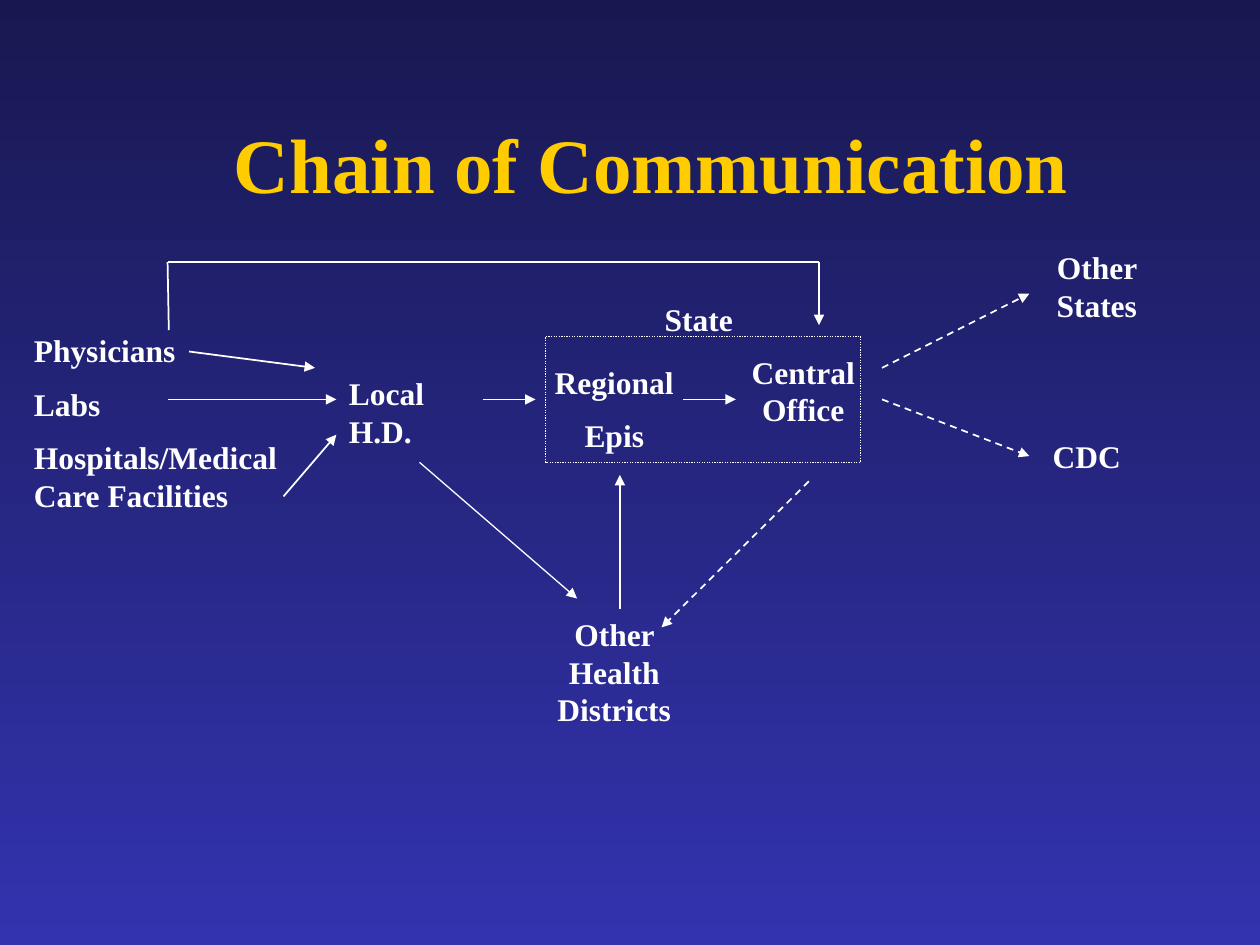
from dataclasses import dataclass

from pptx import Presentation
from pptx.dml.color import RGBColor
from pptx.enum.dml import MSO_LINE
from pptx.enum.shapes import MSO_CONNECTOR, MSO_SHAPE
from pptx.enum.text import MSO_ANCHOR, MSO_AUTO_SIZE, PP_ALIGN
from pptx.oxml.ns import qn
from pptx.util import Inches, Pt
from lxml.etree import SubElement


@dataclass(frozen=True)
class Theme:
    font: str = "Times New Roman"
    title_color: RGBColor = RGBColor(0xFF, 0xCC, 0x00)
    ink: RGBColor = RGBColor(0xFF, 0xFF, 0xFF)
    background_top: RGBColor = RGBColor(0x18, 0x18, 0x51)
    background_bottom: RGBColor = RGBColor(0x33, 0x33, 0xAF)
    title_size: Pt = Pt(44)
    label_size: Pt = Pt(18)
    label_gap: Pt = Pt(9)
    thin: Pt = Pt(0.75)
    medium: Pt = Pt(1)


THEME = Theme()


def apply_format(target, values):
    for name, value in values.items():
        setattr(target, name, value)


def format_font(font, size, color):
    apply_format(font, {"name": THEME.font, "size": size, "bold": True})
    font.color.rgb = color


def place(shape, box):
    names = ("left", "top", "width", "height")
    apply_format(shape, {name: Inches(value) for name, value in zip(names, box)})


def shift(box, offset):
    return box[0] + offset[0], box[1] + offset[1]


def add_label(slide, box, offset, size, lines, alignment=PP_ALIGN.CENTER):
    lengths = [Inches(value) for value in (*shift(box, offset), *size)]
    frame = slide.shapes.add_textbox(*lengths).text_frame
    apply_format(frame, {"word_wrap": True, "auto_size": MSO_AUTO_SIZE.SHAPE_TO_FIT_TEXT})
    frame.text = "\n".join(lines)
    for index, paragraph in enumerate(frame.paragraphs):
        gap = THEME.label_gap if index else Pt(0)
        apply_format(paragraph, {"alignment": alignment, "space_before": gap})
        format_font(paragraph.font, THEME.label_size, THEME.ink)


def add_line(slide, box, start, end, width=THEME.thin, dash=None, arrow=True):
    points = [Inches(value) for value in (*shift(box, start), *shift(box, end))]
    connector = slide.shapes.add_connector(MSO_CONNECTOR.STRAIGHT, *points)
    connector.line.color.rgb = THEME.ink
    apply_format(connector.line, {"width": width, "dash_style": dash})
    if arrow:
        SubElement(connector.line._get_or_add_ln(), qn("a:tailEnd"), type="triangle")
    SubElement(connector._element.spPr, qn("a:effectLst"))


def add_dashed_arrow(slide, box, start, end):
    add_line(slide, box, start, end, THEME.medium, MSO_LINE.DASH)


def paint_background(slide):
    fill = slide.background.fill
    fill.gradient()
    fill.gradient_angle = 270
    colors = (THEME.background_top, THEME.background_bottom)
    for stop, color, position in zip(fill.gradient_stops, colors, (0, 1)):
        stop.color.rgb = color
        stop.position = position


def add_title(slide, box):
    title = slide.shapes.title
    place(title, box)
    frame = title.text_frame
    frame.text = "Chain of Communication"
    apply_format(frame, {
        "vertical_anchor": MSO_ANCHOR.MIDDLE,
        "word_wrap": True,
        "auto_size": MSO_AUTO_SIZE.NONE,
    })
    paragraph = frame.paragraphs[0]
    paragraph.alignment = PP_ALIGN.CENTER
    format_font(paragraph.font, THEME.title_size, THEME.title_color)


def add_reporters(slide, box):
    reporters = ("Physicians", "Labs", "Hospitals/Medical Care Facilities")
    add_label(slide, box, (0, 0.5), (2.25, 1.62), reporters, PP_ALIGN.LEFT)
    add_label(slide, box, (2.5, 0.84), (1.25, 0.7), ["Local H.D."], PP_ALIGN.LEFT)
    add_line(slide, box, (1.33, 0.71), (2.33, 0.84), THEME.medium)
    add_line(slide, box, (1.16, 1.09), (2.5, 1.09))
    add_line(slide, box, (2.08, 1.86), (2.5, 1.37), THEME.medium)


def add_bypass(slide, box):
    width, height = box[2:]
    add_line(slide, box, (0.01, height), (0, 0), THEME.medium, arrow=False)
    add_line(slide, box, (0, 0), (width, 0), THEME.medium, arrow=False)
    add_line(slide, box, (width, 0), (width, 0.5))


def add_state(slide, box):
    frame = slide.shapes.add_shape(MSO_SHAPE.RECTANGLE, 0, 0, 0, 0)
    place(frame, (*shift(box, (0.5, 0.34)), 2.5, 1))
    frame.shadow.inherit = False
    frame.fill.background()
    frame.line.color.rgb = THEME.ink
    apply_format(frame.line, {"width": THEME.thin, "dash_style": MSO_LINE.ROUND_DOT})
    add_label(slide, box, (1.09, 0), (1.25, 0.4), ["State"])
    add_label(slide, box, (0.42, 0.5), (1.25, 0.85), ["Regional", "Epis"])
    add_label(slide, box, (1.92, 0.42), (1.25, 0.7), ["Central Office"])
    for left in (0, 1.59):
        add_line(slide, box, (left, 0.84), (left + 0.42, 0.84))


def add_districts(slide, box):
    add_label(slide, box, (0.92, 1.16), (1.25, 1), ["Other Health Districts"])
    add_line(slide, box, (0, 0), (1.25, 1.08))
    add_line(slide, box, (1.59, 1.16), (1.59, 0.1))
    add_dashed_arrow(slide, box, (3.09, 0.15), (1.92, 1.31))


def add_outside_agencies(slide, box):
    add_label(slide, box, (1.08, 0), (1.25, 0.7), ["Other States"])
    add_label(slide, box, (1, 1.5), (1.25, 0.4), ["CDC"])
    add_dashed_arrow(slide, box, (0, 1), (1.17, 0.41))
    add_dashed_arrow(slide, box, (0, 1.25), (1.17, 1.7))


def main():
    presentation = Presentation()
    presentation.slide_width = Inches(10)
    presentation.slide_height = Inches(7.5)
    slide = presentation.slides.add_slide(presentation.slide_layouts[5])
    paint_background(slide)
    add_title(slide, (0.92, 0.67, 8.5, 1.25))
    add_reporters(slide, (0.17, 2.08, 3.75, 2.12))
    add_bypass(slide, (1.33, 2.08, 5.17, 0.54))
    add_state(slide, (3.83, 2.33, 3.17, 1.35))
    add_districts(slide, (3.33, 3.67, 3.09, 2.16))
    add_outside_agencies(slide, (7, 1.92, 2.33, 1.9))
    presentation.save("out.pptx")


if __name__ == "__main__":
    main()
